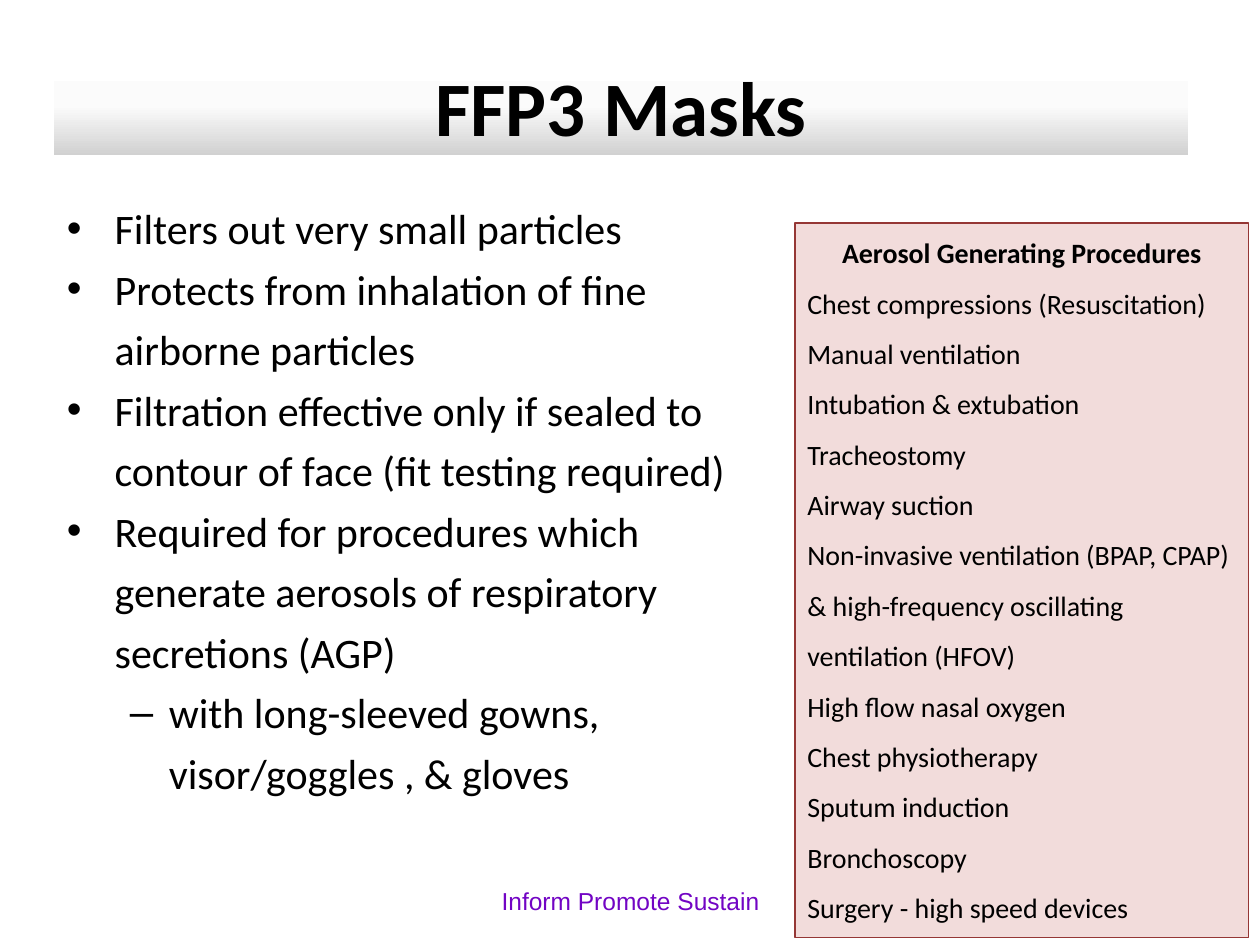
"""Build the FFP3 masks slide with its list of aerosol generating procedures."""
from copy import deepcopy
from dataclasses import dataclass

from pptx import Presentation
from pptx.dml.color import RGBColor
from pptx.enum.shapes import MSO_SHAPE
from pptx.enum.text import MSO_ANCHOR, MSO_AUTO_SIZE, PP_ALIGN
from pptx.shapes.autoshape import Shape
from pptx.text.text import TextFrame
from pptx.util import Inches, Pt

WIDTH, HEIGHT = Inches(10), Inches(7.5)


@dataclass(frozen=True)
class Theme:
    font: str = "Calibri"
    footer_font: str = "Arial"
    ink: str = "000000"
    footer_ink: str = "7204C4"
    panel: str = "F2DCDB"
    panel_edge: str = "953735"
    title_fade: tuple[str, ...] = ("FFFFFF", "FBFBFB", "D1D1D1")
    title_size: int = 44
    body_size: int = 24
    panel_size: int = 16
    footer_size: int = 14


@dataclass(frozen=True)
class Area:
    """Position and size as shares of the slide."""
    left: float
    top: float
    width: float
    height: float

    def box(self) -> tuple[int, int, int, int]:
        return (int(self.left * WIDTH), int(self.top * HEIGHT),
                int(self.width * WIDTH), int(self.height * HEIGHT))


@dataclass(frozen=True)
class Point:
    text: str
    level: int = 0


THEME = Theme()
TITLE_AREA = Area(0.043, 0.06, 0.9, 0.104)
BODY_AREA = Area(0.043, 0.1973, 0.588, 0.7147)
FOOTER_AREA = Area(0.342, 0.9267, 0.317, 0.0533)
PANEL_AREA = Area(0.631, 0.236, 0.36, 0.756)
LEVEL_INDENTS = ((0.38, -0.38), (0.81, -0.31))

POINTS = (
    Point("Filters out very small particles"),
    Point("Protects from inhalation of fine airborne particles"),
    Point("Filtration effective only if sealed to contour of face (fit testing required)"),
    Point("Required for procedures which generate aerosols of respiratory secretions (AGP)"),
    Point("with long-sleeved gowns, visor/goggles , & gloves", level=1),
)
PROCEDURES = (
    "Chest compressions (Resuscitation) Manual ventilation",
    "Intubation & extubation",
    "Tracheostomy",
    "Airway suction",
    "Non-invasive ventilation (BPAP, CPAP) & high-frequency oscillating ventilation (HFOV)",
    "High flow nasal oxygen",
    "Chest physiotherapy",
    "Sputum induction",
    "Bronchoscopy",
    "Surgery - high speed devices",
)


def write(frame: TextFrame, text: str, *, size: int, font: str = THEME.font,
          color: str = THEME.ink, bold: bool = False,
          align: PP_ALIGN = PP_ALIGN.LEFT, spacing: float = 1.0,
          level: int = 0, indent: tuple[float, float] | None = None) -> None:
    """Fill the first free paragraph of a frame, or add one."""
    last = frame.paragraphs[-1]
    paragraph = frame.add_paragraph() if last.runs else last
    paragraph.alignment, paragraph.level = align, level
    paragraph.line_spacing, paragraph.space_before = spacing, Pt(0)
    if indent:
        margin, first = indent
        properties = paragraph._p.get_or_add_pPr()
        properties.set("marL", str(Inches(margin)))
        properties.set("indent", str(Inches(first)))
    run = paragraph.add_run()
    run.text = text
    run.font.name, run.font.size, run.font.bold = font, Pt(size), bold
    run.font.color.rgb = RGBColor.from_string(color)


def place(shape: Shape, area: Area, anchor: MSO_ANCHOR) -> TextFrame:
    """Move a shape to its area and return its prepared text frame."""
    shape.left, shape.top, shape.width, shape.height = area.box()
    frame = shape.text_frame
    frame.word_wrap, frame.vertical_anchor = True, anchor
    frame.auto_size = MSO_AUTO_SIZE.NONE
    return frame


def fade(shape: Shape, colors: tuple[str, ...]) -> None:
    """Fill a shape from top to bottom with evenly spaced colours."""
    shape.fill.gradient()
    shape.fill.gradient_angle = 270
    first = shape._element.xpath(".//a:gs")[0]
    for _ in colors[2:]:
        first.addnext(deepcopy(first))
    for index, (stop, color) in enumerate(zip(shape.fill.gradient_stops, colors)):
        stop.position = index / (len(colors) - 1)
        stop.color.rgb = RGBColor.from_string(color)


def main() -> None:
    deck = Presentation()
    deck.slide_width, deck.slide_height = WIDTH, HEIGHT
    slide = deck.slides.add_slide(deck.slide_layouts[1])
    title, body = slide.placeholders

    fade(title, THEME.title_fade)
    write(place(title, TITLE_AREA, MSO_ANCHOR.MIDDLE), "FFP3 Masks",
          size=THEME.title_size, bold=True, align=PP_ALIGN.CENTER)

    body_frame = place(body, BODY_AREA, MSO_ANCHOR.TOP)
    for point in POINTS:
        write(body_frame, point.text, size=THEME.body_size, spacing=1.2,
              level=point.level, indent=LEVEL_INDENTS[point.level])

    footer = slide.shapes.add_textbox(*FOOTER_AREA.box())
    write(place(footer, FOOTER_AREA, MSO_ANCHOR.MIDDLE), "Inform Promote Sustain",
          size=THEME.footer_size, font=THEME.footer_font,
          color=THEME.footer_ink, align=PP_ALIGN.CENTER)

    panel = slide.shapes.add_shape(MSO_SHAPE.RECTANGLE, *PANEL_AREA.box())
    panel.shadow.inherit = False
    panel.fill.solid()
    panel.fill.fore_color.rgb = RGBColor.from_string(THEME.panel)
    panel.line.color.rgb = RGBColor.from_string(THEME.panel_edge)
    panel.line.width = Pt(0.75)
    panel_frame = place(panel, PANEL_AREA, MSO_ANCHOR.TOP)
    panel_frame.auto_size = MSO_AUTO_SIZE.SHAPE_TO_FIT_TEXT
    write(panel_frame, "Aerosol Generating Procedures", size=THEME.panel_size,
          bold=True, align=PP_ALIGN.CENTER, spacing=1.2)
    for procedure in PROCEDURES:
        write(panel_frame, procedure, size=THEME.panel_size, spacing=1.5)

    deck.save("out.pptx")


if __name__ == "__main__":
    main()
